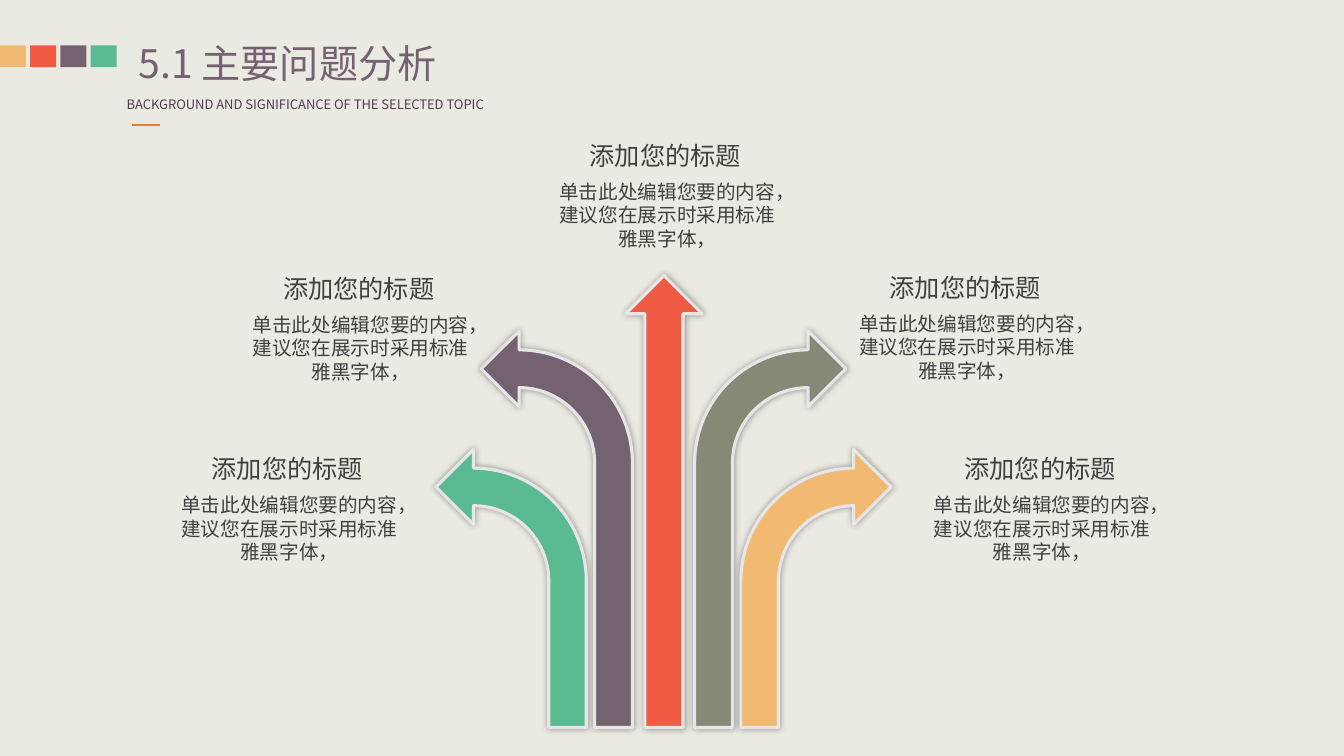
from lxml.etree import SubElement
from pptx import Presentation
from pptx.dml.color import RGBColor
from pptx.enum.shapes import MSO_CONNECTOR as Connector, MSO_SHAPE as Shape
from pptx.enum.text import MSO_ANCHOR as Anchor, PP_ALIGN as Align
from pptx.oxml.ns import qn
from pptx.util import Inches, Pt

FONT = "Noto Sans CJK SC"
COLUMNS, ROWS = 160, 90
CELL = Inches(7.5) / ROWS
CENTRE, ARROW_FOOT = 79, 86.6
ORANGE, RED, PURPLE, GREEN, OLIVE = "F2B973", "EF5B43", "756271", "5ABB93", "858976"
HEADING = "添加您的标题"
DETAIL = "单击此处编辑您要的内容，建议您在展示时采用标准雅黑字体，"


def grid(*cells):
    return [round(cell * CELL) for cell in cells]


def paint(color_format, color):
    color_format.rgb = RGBColor.from_string(color)


def write(shape, text, size, color="404040", align=Align.LEFT, wrap=True,
          anchor=Anchor.TOP, inset=None):
    frame = shape.text_frame
    frame.word_wrap = wrap
    frame.vertical_anchor = anchor
    if inset is not None:
        frame.margin_left = frame.margin_right = inset
        frame.margin_top = frame.margin_bottom = inset
    paragraph = frame.paragraphs[0]
    paragraph.alignment = align
    run = paragraph.add_run()
    run.text = text
    run.font.size = Pt(size)
    run.font.name = FONT
    paint(run.font.color, color)
    SubElement(run._r.get_or_add_rPr(), qn("a:ea"), typeface=FONT)


def add_text(slide, cells, text, size, **options):
    write(slide.shapes.add_textbox(*grid(*cells)), text, size, **options)


def add_filled(slide, kind, cells, color):
    shape = slide.shapes.add_shape(kind, *grid(*cells))
    shape.shadow.inherit = False
    shape.fill.solid()
    paint(shape.fill.fore_color, color)
    shape.line.fill.background()
    return shape


def add_arrow(slide, kind, left, top, width, color):
    arrow = add_filled(slide, kind, (left, top, width, ARROW_FOOT - top), color)
    paint(arrow.line.color, "E7E6E6")
    arrow.line.width = Pt(2.25)
    effects = arrow._element.spPr.find(qn("a:effectLst"))
    shadow = SubElement(effects, qn("a:outerShdw"), blurRad=str(Pt(5)), dist="0",
                        algn="ctr", rotWithShape="0")
    black = SubElement(shadow, qn("a:srgbClr"), val="000000")
    SubElement(black, qn("a:alpha"), val="40000")
    return arrow


def add_bent_pair(slide, gap, top, width, left_color, right_color):
    for left, color, flipped in ((CENTRE + gap, right_color, False),
                                 (CENTRE - gap - width, left_color, True)):
        arrow = add_arrow(slide, Shape.BENT_ARROW, left, top, width, color)
        for index, share in enumerate((0.25, 0.25, 0.25, 0.75)):
            arrow.adjustments[index] = share
        if flipped:
            arrow._element.spPr.find(qn("a:xfrm")).set("flipH", "1")


def add_topic(slide, left, top):
    add_text(slide, (left + 3.5, top, 20.6, 4.8), HEADING, 18,
             align=Align.RIGHT, wrap=False)
    add_text(slide, (left, top + 4.7, 28.3, 9.7), DETAIL, 14, align=Align.CENTER)


def add_header(slide):
    for index, color in enumerate((ORANGE, RED, PURPLE, GREEN)):
        add_filled(slide, Shape.RECTANGLE, (index * 3.6, 5.4, 3.1, 2.6), color)
    title = slide.shapes.title
    title.left, title.top, title.width, title.height = grid(16.5, 4.7, 47.9, 5.6)
    write(title, "5.1 主要问题分析", 28, color=PURPLE, inset=0)
    add_text(slide, (13.9, 10.9, 48.8, 3.1),
             "BACKGROUND AND SIGNIFICANCE OF THE SELECTED TOPIC", 9.3,
             color="543C4F", wrap=False)
    rule = slide.shapes.add_connector(Connector.STRAIGHT, *grid(15.7, 14.9, 19.1, 14.9))
    paint(rule.line.color, "ED7D31")
    rule.line.width = Pt(1.5)
    SubElement(rule._element.spPr, qn("a:effectLst"))


def main():
    presentation = Presentation()
    presentation.slide_width, presentation.slide_height = grid(COLUMNS, ROWS)
    slide = presentation.slides.add_slide(presentation.slide_layouts[5])
    slide.background.fill.solid()
    paint(slide.background.fill.fore_color, "EBEAE2")
    add_header(slide)
    add_bent_pair(slide, 3.7, 39.4, 18, PURPLE, OLIVE)
    add_bent_pair(slide, 9.2, 53.5, 17.9, GREEN, ORANGE)
    add_arrow(slide, Shape.UP_ARROW, CENTRE - 4.5, 32.8, 9.1, RED)
    for left, top in ((20.3, 53.4), (28.8, 31.9), (65.3, 16.1), (101, 31.8), (109.9, 53.4)):
        add_topic(slide, left, top)
    presentation.save("out.pptx")


if __name__ == "__main__":
    main()
